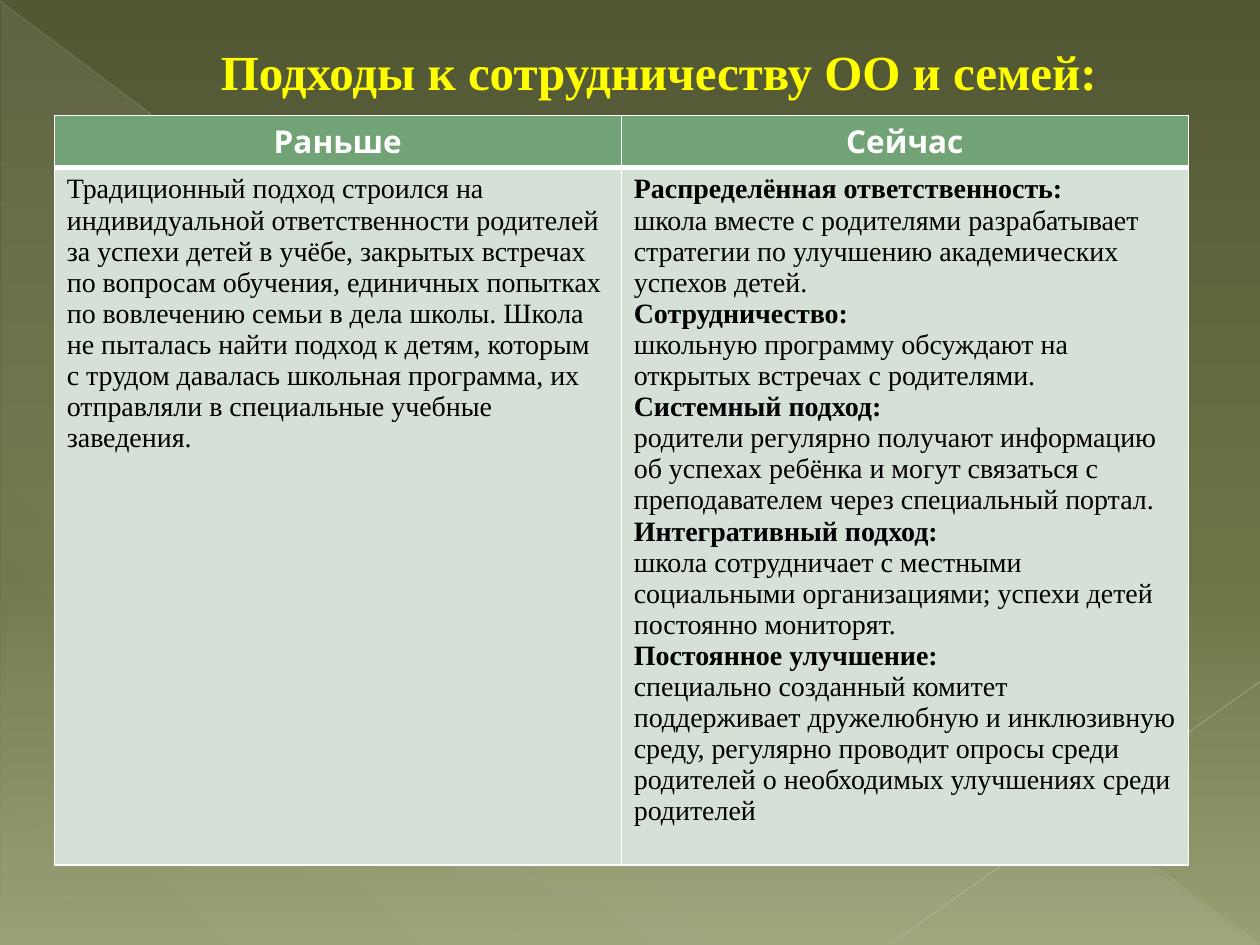
from lxml import etree
from pptx import Presentation
from pptx import util as u
from pptx.dml.color import RGBColor
from pptx.enum import shapes, text
from pptx.oxml.ns import qn

Pt = u.Pt
YELLOW = RGBColor(0xFF, 0xFF, 0x00)
WHITE = RGBColor(0xFF, 0xFF, 0xFF)
BLACK = RGBColor(0x00, 0x00, 0x00)
GREEN = RGBColor(0x72, 0xA3, 0x76)
DARK_GREEN = RGBColor(0x4F, 0x71, 0x52)
PALE_GREEN = RGBColor(0xD5, 0xE0, 0xD6)
OLIVE_DARK = RGBColor(0x52, 0x57, 0x34)
OLIVE = RGBColor(0x6D, 0x73, 0x45)
OLIVE_LIGHT = RGBColor(0x99, 0x9F, 0x73)
CREAM = RGBColor(0xEA, 0xEB, 0xDE)
GREY = RGBColor(0xC1, 0xC3, 0xB9)
LIGHT_GREY = RGBColor(0xC8, 0xC9, 0xC1)

SERIF = "Times New Roman"
HEADERS = ["Раньше", "Сейчас"]
BEFORE = (
    "Традиционный подход строился на индивидуальной ответственности родителей "
    "за успехи детей в учёбе, закрытых встречах по вопросам обучения, единичных "
    "попытках по вовлечению семьи в дела школы. Школа не пыталась найти подход "
    "к детям, которым с трудом давалась школьная программа, их отправляли "
    "в специальные учебные заведения."
)
NOW = [
    ("Распределённая ответственность:",
     "школа вместе с родителями разрабатывает стратегии по улучшению "
     "академических успехов детей."),
    ("Сотрудничество:",
     "школьную программу обсуждают на открытых встречах с родителями."),
    ("Системный подход:",
     "родители регулярно получают информацию об успехах ребёнка и могут "
     "связаться с преподавателем через специальный портал."),
    ("Интегративный подход:",
     "школа сотрудничает с местными социальными организациями; успехи детей "
     "постоянно мониторят."),
    ("Постоянное улучшение:",
     "специально созданный комитет поддерживает дружелюбную и инклюзивную "
     "среду, регулярно проводит опросы среди родителей о необходимых "
     "улучшениях среди родителей"),
]


def add_text(frame, content, size=16, font=SERIF, color=BLACK, bold=False,
             align=text.PP_ALIGN.LEFT):
    paragraph = frame.paragraphs[0]
    if paragraph.runs:
        paragraph = frame.add_paragraph()
    paragraph.alignment = align
    run = paragraph.add_run()
    run.text = content
    run.font.size = Pt(size)
    run.font.name = font
    run.font.bold = bold
    run.font.color.rgb = color
    return paragraph


def set_gradient(fill, element, stops, angle):
    fill.gradient()
    gradient = next(element.iter(qn("a:gradFill")))
    stop_list = gradient.find(qn("a:gsLst"))
    for old_stop in list(stop_list):
        stop_list.remove(old_stop)
    for position, color, opacity in stops:
        stop = etree.SubElement(stop_list, qn("a:gs"), pos=str(position * 1000))
        solid = etree.SubElement(stop, qn("a:srgbClr"), val=str(color))
        if opacity < 100:
            etree.SubElement(solid, qn("a:alpha"), val=str(opacity * 1000))
    gradient.find(qn("a:lin")).set("ang", str(angle * 60000))


presentation = Presentation()
presentation.slide_width = Pt(720)
presentation.slide_height = Pt(540)
slide = presentation.slides.add_slide(presentation.slide_layouts[5])
set_gradient(slide.background.fill, slide.element,
             [(0, OLIVE_DARK, 100), (60, OLIVE, 100), (100, OLIVE_LIGHT, 100)], 90)

triangle = slide.shapes.add_shape(shapes.MSO_SHAPE.RIGHT_TRIANGLE,
                                  Pt(0.7), Pt(1.4), Pt(718.6), Pt(538.6))
triangle.shadow.inherit = False
triangle.line.fill.background()
set_gradient(triangle.fill, triangle.element,
             [(0, CREAM, 10), (70, CREAM, 8), (100, CREAM, 1)], 133)

for start, end, color, width, opacity in [
    ((0, 0.7), (719.3, 539.3), GREY, 0.39, 35),
    ((720, 389.5), (509, 539.3), LIGHT_GREY, 0.47, 45),
]:
    line = slide.shapes.add_connector(shapes.MSO_CONNECTOR.STRAIGHT,
                                      *map(Pt, start + end))
    line.line.color.rgb = color
    line.line.width = Pt(width)
    solid = next(line.element.iter(qn("a:srgbClr")))
    etree.SubElement(solid, qn("a:alpha"), val=str(opacity * 1000))
    etree.SubElement(line.element.spPr, qn("a:effectLst"))

title = slide.shapes.title
title.left, title.top, title.width, title.height = map(Pt, (8.6, 9.4, 697.7, 62.6))
title.text_frame.vertical_anchor = text.MSO_ANCHOR.MIDDLE
heading = add_text(title.text_frame, "Подходы к сотрудничеству ОО и семей:",
                   size=28, color=YELLOW, bold=True, align=text.PP_ALIGN.CENTER)
heading_properties = heading._p.get_or_add_pPr()
heading_properties.set("marL", str(Pt(38)))
heading_properties.set("indent", "0")
outline = etree.Element(qn("a:ln"), w=str(Pt(0.5)))
outline_fill = etree.SubElement(outline, qn("a:solidFill"))
etree.SubElement(outline_fill, qn("a:srgbClr"), val=str(DARK_GREEN))
heading.runs[0].font._element.insert(0, outline)
slide.shapes._spTree.append(title.element)

table = slide.shapes.add_table(2, 2, Pt(31), Pt(66), Pt(648), Pt(428)).table
table.first_row = True
table.horz_banding = False
table.rows[0].height = Pt(29.5)
table.rows[1].height = Pt(398.5)
for column, header in enumerate(HEADERS):
    table.columns[column].width = Pt(324)
    add_text(table.cell(0, column).text_frame, header, size=18, font="Quicksand",
             color=WHITE, bold=True, align=text.PP_ALIGN.CENTER)

add_text(table.cell(1, 0).text_frame, BEFORE)
for approach, explanation in NOW:
    add_text(table.cell(1, 1).text_frame, approach, bold=True)
    add_text(table.cell(1, 1).text_frame, explanation)

for row, (fill_color, top, bottom) in enumerate([(GREEN, 1, 3), (PALE_GREEN, 3, 1)]):
    for cell in table.rows[row].cells:
        cell.fill.solid()
        cell.fill.fore_color.rgb = fill_color
        properties = cell._tc.get_or_add_tcPr()
        borders = [("L", 1), ("R", 1), ("T", top), ("B", bottom)]
        for index, (side, width) in enumerate(borders):
            border = etree.Element(qn(f"a:ln{side}"), w=str(Pt(width)))
            border_fill = etree.SubElement(border, qn("a:solidFill"))
            etree.SubElement(border_fill, qn("a:srgbClr"), val=str(WHITE))
            properties.insert(index, border)

presentation.save("out.pptx")
